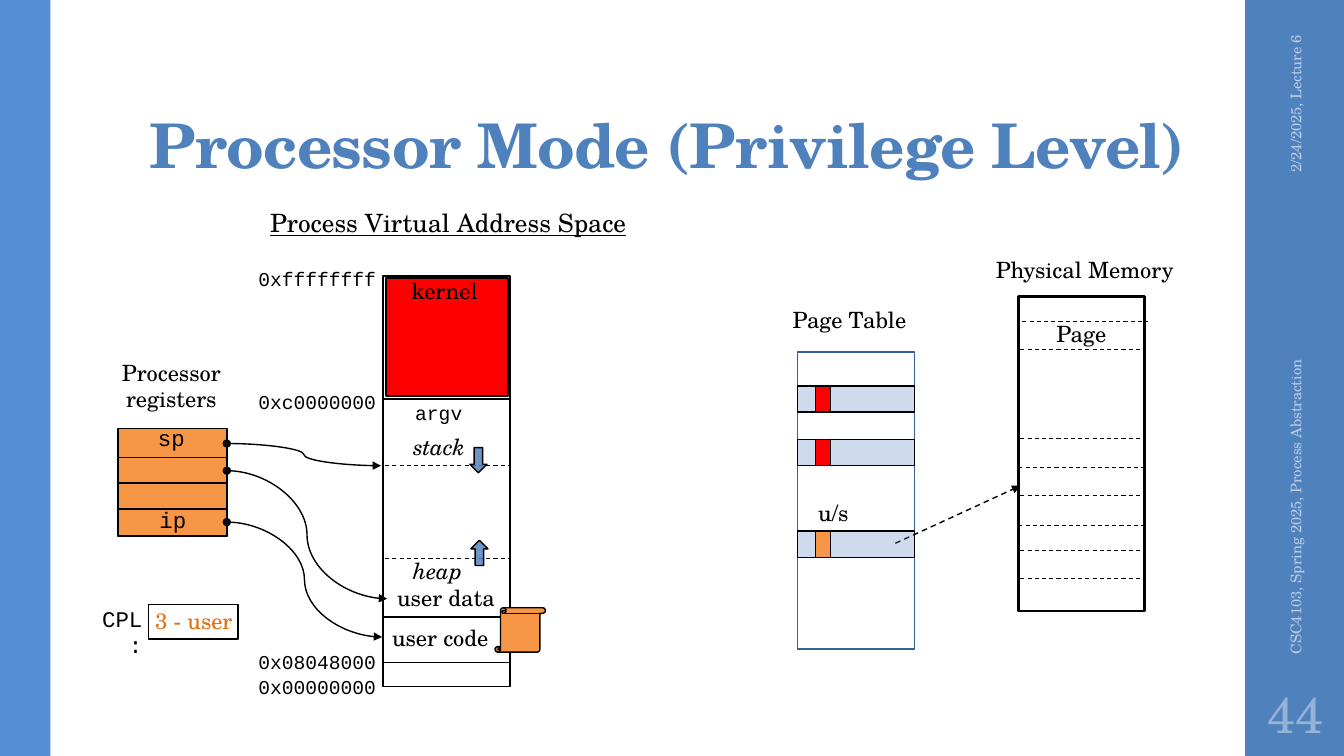
from lxml import etree
from pptx import Presentation
from pptx.dml.color import RGBColor
from pptx.enum.dml import MSO_LINE
from pptx.enum.shapes import MSO_CONNECTOR as Link, MSO_SHAPE as Shape
from pptx.enum.text import MSO_ANCHOR as Anchor, MSO_AUTO_SIZE as AutoSize, PP_ALIGN as Align
from pptx.oxml.ns import qn
from pptx.util import Inches, Pt

BLACK = RGBColor(0x00, 0x00, 0x00)
BLUE = RGBColor(0x4F, 0x81, 0xBD)
LEFT_BLUE = RGBColor(0x55, 0x8E, 0xD5)
TABLE_BLUE = RGBColor(0x37, 0x60, 0x92)
FOOTER_BLUE = RGBColor(0xB9, 0xCD, 0xE5)
NUMBER_BLUE = RGBColor(0x95, 0xB3, 0xD7)
ORANGE = RGBColor(0xF7, 0x96, 0x46)
MODE_ORANGE = RGBColor(0xE4, 0x6C, 0x0A)
RED = RGBColor(0xFF, 0x00, 0x00)
SERIF, MONO = "TeX Gyre Schola", "Courier New"

TITLE = "Processor Mode (Privilege Level)"
SIDE_BARS = [((12.35, 0, 1, 7.5), BLUE), ((0, 0, 0.5, 7.5), LEFT_BLUE)]
FOOTERS = [
    ("2/24/2025, Lecture 6", (11.81, 1.09, 2.08, 0.4), Align.RIGHT),
    ("CSC4103, Spring 2025, Process Abstraction", (10.89, 4.43, 3.92, 0.4), Align.LEFT),
]
SLIDE_NUMBER = ("44", (12.35, 6.75, 1, 0.65))

ADDRESSES = [("0xffffffff", 2.6), ("0xc0000000", 3.82), ("0x08048000", 6.4), ("0x00000000", 6.65)]
SPACE_LABELS = [
    ("user code", (3.79, 6.14, 1.27, 0.37), Align.LEFT, {}),
    ("user data", (3.84, 5.75, 1.21, 0.37), Align.LEFT, {}),
    ("heap", (3.91, 5.48, 0.86, 0.37), Align.CENTER, {"italic": True}),
    ("stack", (3.91, 4.25, 0.89, 0.37), Align.CENTER, {"italic": True}),
    ("argv", (4.02, 3.93, 0.77, 0.34), Align.LEFT, {"font": MONO, "size": 14}),
    ("kernel", (3.9, 2.7, 1.02, 0.37), Align.CENTER, {}),
]
OTHER_LABELS = [
    ("Process Virtual Address Space", (2.47, 2.01, 3.95, 0.4), Align.CENTER, {"size": 18, "underline": True}),
    ("Processor\nregisters", (1.07, 3.51, 1.26, 0.64), Align.CENTER, {}),
    ("ip", (1.4, 4.97, 0.63, 0.37), Align.CENTER, {"font": MONO}),
    ("sp", (1.43, 4.16, 0.54, 0.37), Align.CENTER, {"font": MONO}),
    ("Page Table", (7.67, 2.99, 1.51, 0.37), Align.CENTER, {}),
    ("Physical Memory", (9.68, 2.49, 2.16, 0.37), Align.CENTER, {}),
    ("Page", (10.36, 3.13, 0.73, 0.37), Align.CENTER, {}),
    ("u/s", (8.01, 4.9, 0.51, 0.37), Align.CENTER, {"wrap": False}),
    ("CPL:", (0.82, 5.95, 0.69, 0.37), Align.RIGHT, {"font": MONO}),
    ("3 - user", (1.44, 5.97, 0.98, 0.37), Align.LEFT, {"color": MODE_ORANGE, "wrap": False}),
]
FRAMES = [
    ((3.8, 2.74, 1.26, 4.07), None, BLACK, 1),
    ((1.17, 4.25, 1.08, 1.07), ORANGE, BLACK, 1),
    ((1.17, 4.54, 1.08, 0.25), None, BLACK, 1),
    ((1.17, 5.05, 1.08, 0.27), None, BLACK, 1),
    ((10.1, 2.94, 1.25, 3.12), None, BLACK, 1.75),
    ((7.91, 3.49, 1.16, 2.95), None, TABLE_BLUE, 1),
    ((1.47, 6, 0.89, 0.34), None, BLACK, 1),
    ((3.83, 2.76, 1.21, 1.17), RED, BLACK, 1),
]
SPACE_BORDERS = [(3.96, 1.25), (6.12, 1), (6.57, 1)]
STACK_HEAP_LIMITS = [4.62, 5.54]
MEMORY_PAGES = [(10.14, 3.19), (10.12, 3.47), (10.12, 4.35), (10.1, 4.64),
                (10.12, 4.92), (10.1, 5.21), (10.12, 5.46), (10.12, 5.74)]
REGISTER_POINTERS = [
    ((2.25, 5.18), (3.79, 6.32)),
    ((2.25, 4.4), (3.78, 4.62)),
    ((2.25, 4.67), (3.84, 5.94)),
]
PAGE_POINTER = ((8.88, 5.39), (10.12, 4.82))
PAGE_ENTRIES = [(3.83, RED), (4.36, RED), (5.27, ORANGE)]
GROWTH_ARROWS = [((4.67, 5.36, 0.17, 0.25), 0), ((4.66, 4.44, 0.17, 0.25), 180)]
CODE_SCROLL = (4.91, 6.03, 0.5, 0.44)

prs = Presentation()
prs.slide_width, prs.slide_height = Inches(13.33), Inches(7.5)
slide = prs.slides.add_slide(prs.slide_layouts[5])


def inches(values):
    return [Inches(value) for value in values]


def add_box(box, fill=None, line=BLACK, width=1, kind=Shape.RECTANGLE, opacity=100):
    shape = slide.shapes.add_shape(kind, *inches(box))
    shape.shadow.inherit = False
    if fill is None:
        shape.fill.background()
    else:
        shape.fill.solid()
        shape.fill.fore_color.rgb = fill
        if opacity < 100:
            color = shape._element.spPr.find(qn("a:solidFill"))[0]
            etree.SubElement(color, qn("a:alpha"), val=str(opacity * 1000))
    if line is None:
        shape.line.fill.background()
    else:
        shape.line.color.rgb = line
        shape.line.width = Pt(width)
    return shape


def add_line(start, end, width=1, dashed=False, kind=Link.STRAIGHT, head=None, tail=None):
    link = slide.shapes.add_connector(kind, *inches(start + end))
    link.line.color.rgb = BLACK
    link.line.width = Pt(width)
    if dashed:
        link.line.dash_style = MSO_LINE.DASH
    outline = link.line._get_or_add_ln()
    for tag, mark in (("a:headEnd", head), ("a:tailEnd", tail)):
        if mark:
            etree.SubElement(outline, qn(tag), type=mark)
    etree.SubElement(link._element.spPr, qn("a:effectLst"))


def format_text(frame, align, font=SERIF, size=16, color=BLACK, **styles):
    for paragraph in frame.paragraphs:
        paragraph.alignment = align
        for run in paragraph.runs:
            run.font.name = font
            run.font.size = Pt(size)
            run.font.color.rgb = color
            for style, value in styles.items():
                setattr(run.font, style, value)


def add_label(text, box, align, wrap=True, **look):
    label = slide.shapes.add_textbox(*inches(box))
    label.text_frame.word_wrap = wrap
    label.text_frame.text = text
    format_text(label.text_frame, align, **look)
    return label


for box, fill in SIDE_BARS:
    add_box(box, fill, None)

title = slide.shapes.title
title.left, title.top, title.width, title.height = inches((1.38, 0.32, 10.6, 1.53))
heading = title.text_frame
heading.text = TITLE
heading.word_wrap = True
heading.auto_size = AutoSize.NONE
heading.vertical_anchor = Anchor.BOTTOM
heading.margin_top, heading.margin_bottom = Inches(0.03), Inches(0.05)
heading.paragraphs[0].line_spacing = 0.9
format_text(heading, Align.LEFT, size=44, color=BLUE, bold=True)
heading.paragraphs[0].runs[0].font._element.set("spc", "-50")

for text, box, align in FOOTERS:
    footer = add_label(text, box, align, size=10.5, color=FOOTER_BLUE)
    footer.rotation = 270
    footer.text_frame.vertical_anchor = Anchor.MIDDLE

number = add_label(*SLIDE_NUMBER, Align.CENTER, size=36, color=NUMBER_BLUE)
number.text_frame.vertical_anchor = Anchor.MIDDLE
number.text_frame.margin_left = number.text_frame.margin_right = Inches(0.05)

for frame in FRAMES:
    add_box(*frame)
for y, width in SPACE_BORDERS:
    add_line((3.8, y), (5.06, y), width)
for x, y in [(3.82, y) for y in STACK_HEAP_LIMITS] + MEMORY_PAGES:
    add_line((x, y), (x + 1.25, y), 0.75, dashed=True)
for start, end in REGISTER_POINTERS:
    add_line(start, end, kind=Link.CURVE, head="oval", tail="triangle")
add_line(*PAGE_POINTER, dashed=True, tail="triangle")

for y, mode_color in PAGE_ENTRIES:
    add_box((7.91, y, 1.16, 0.26), BLUE, opacity=28)
    add_box((8.09, y, 0.15, 0.26), mode_color)
for box, turn in GROWTH_ARROWS:
    add_box(box, BLUE, kind=Shape.UP_ARROW, opacity=83).rotation = turn
add_box(CODE_SCROLL, ORANGE, kind=Shape.VERTICAL_SCROLL)

for address, y in ADDRESSES:
    add_label(address, (2.4, y, 1.43, 0.34), Align.RIGHT, font=MONO, size=14)
for text, box, align, look in SPACE_LABELS + OTHER_LABELS:
    add_label(text, box, align, **look)

prs.save("out.pptx")
